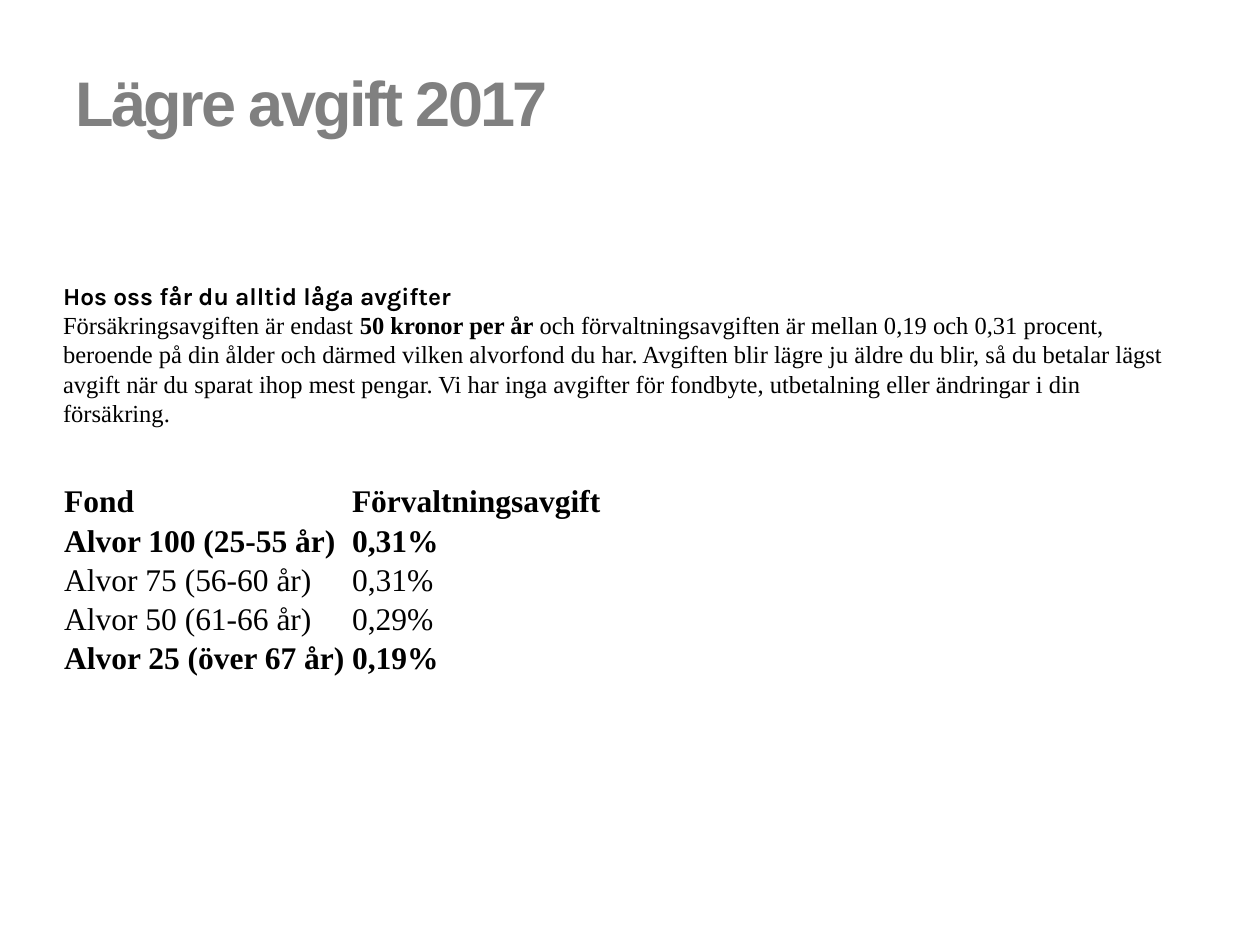
from dataclasses import dataclass

from pptx import Presentation
from pptx.dml.color import RGBColor
from pptx.enum.text import MSO_ANCHOR
from pptx.util import Pt

MIDDLE = MSO_ANCHOR.MIDDLE
TOP = MSO_ANCHOR.TOP
COLORS = {"title": "808080", "text": "000000"}
SERIF = "Times New Roman"
PLAIN_TABLE_STYLE = "{2D5ABB26-0587-4C30-8999-92F81FD0307C}"
LEFT = 36
TABLE_TOP = 275.8
COLUMN_WIDTH = 164.5
ROW_HEIGHT = 21.4
SIDE_MARGIN = 0.7
EDGE_MARGIN = 0.38


@dataclass
class FundRow:
    fund: str
    fee: str
    bold: bool = False


FUND_ROWS = [
    FundRow("Fond", "Förvaltningsavgift", True),
    FundRow("Alvor 100 (25-55 år)", "0,31%", True),
    FundRow("Alvor 75 (56-60 år)", "0,31%"),
    FundRow("Alvor 50 (61-66 år)", "0,29%"),
    FundRow("Alvor 25 (över 67 år)", "0,19%", True),
]


def add_span(para, text: str, *, size: float, font: str = SERIF, color: str = "text",
             bold: bool = False, spacing: float = 0) -> None:
    """Add a formatted span of text to a paragraph."""
    span = para.add_run()
    span.text = text
    span.font.name = font
    span.font.size = Pt(size)
    span.font.bold = bold
    span.font.color.rgb = RGBColor.from_string(COLORS[color])
    if spacing:
        span.font._element.set("spc", str(round(spacing * 100)))


def add_text_frame(slide, top: float, width: float, height: float):
    """Add a wrapping text box at the left margin and return its text frame."""
    box = slide.shapes.add_textbox(Pt(LEFT), Pt(top), Pt(width), Pt(height))
    frame = box.text_frame
    frame.word_wrap = True
    frame.vertical_anchor = TOP
    return frame


def add_fee_text(slide) -> None:
    """Add the heading and paragraph about the fees."""
    frame = add_text_frame(slide, 160.3, 630, 106.6)
    frame.margin_left = frame.margin_right = frame.margin_top = 0
    frame.margin_bottom = Pt(5)
    add_span(frame.paragraphs[0], "Hos oss får du alltid låga avgifter",
             size=14, font="Karla", bold=True)
    para = frame.add_paragraph()
    add_span(para, "Försäkringsavgiften är endast ", size=14)
    add_span(para, "50 kronor per år ", size=14, bold=True)
    add_span(para, "och förvaltningsavgiften är mellan 0,19 och 0,31 procent, beroende på din "
             "ålder och därmed vilken alvorfond du har. Avgiften blir lägre ju äldre du blir, "
             "så du betalar lägst avgift när du sparat ihop mest pengar. Vi har inga avgifter "
             "för fondbyte, utbetalning eller ändringar i din försäkring.", size=14)


def add_fund_table(slide, rows: list[FundRow]) -> None:
    """Add the plain table of funds and fees."""
    frame = slide.shapes.add_table(len(rows), 2, Pt(LEFT), Pt(TABLE_TOP), Pt(2 * COLUMN_WIDTH),
                                   Pt(len(rows) * ROW_HEIGHT))
    table = frame.table
    table.first_row = table.horz_banding = False
    table._tbl.tblPr[0].text = PLAIN_TABLE_STYLE
    for column in table.columns:
        column.width = Pt(COLUMN_WIDTH)
    for table_row, row in zip(table.rows, rows):
        table_row.height = Pt(ROW_HEIGHT)
        for cell, text in zip(table_row.cells, (row.fund, row.fee)):
            cell.fill.background()
            cell.vertical_anchor = MIDDLE
            cell.margin_left = cell.margin_right = Pt(SIDE_MARGIN)
            cell.margin_top = cell.margin_bottom = Pt(EDGE_MARGIN)
            add_span(cell.text_frame.paragraphs[0], text, size=18, bold=row.bold)


def main() -> None:
    """Build and save the deck."""
    deck = Presentation()
    deck.slide_width, deck.slide_height = Pt(720), Pt(540)
    slide = deck.slides.add_slide(deck.slide_layouts[6])
    title = add_text_frame(slide, 32.8, 648, 90)
    add_span(title.paragraphs[0], "Lägre avgift 2017", size=36, font="Arial",
             color="title", bold=True, spacing=-1.5)
    add_fund_table(slide, FUND_ROWS)
    add_fee_text(slide)
    deck.save("out.pptx")


if __name__ == "__main__":
    main()
